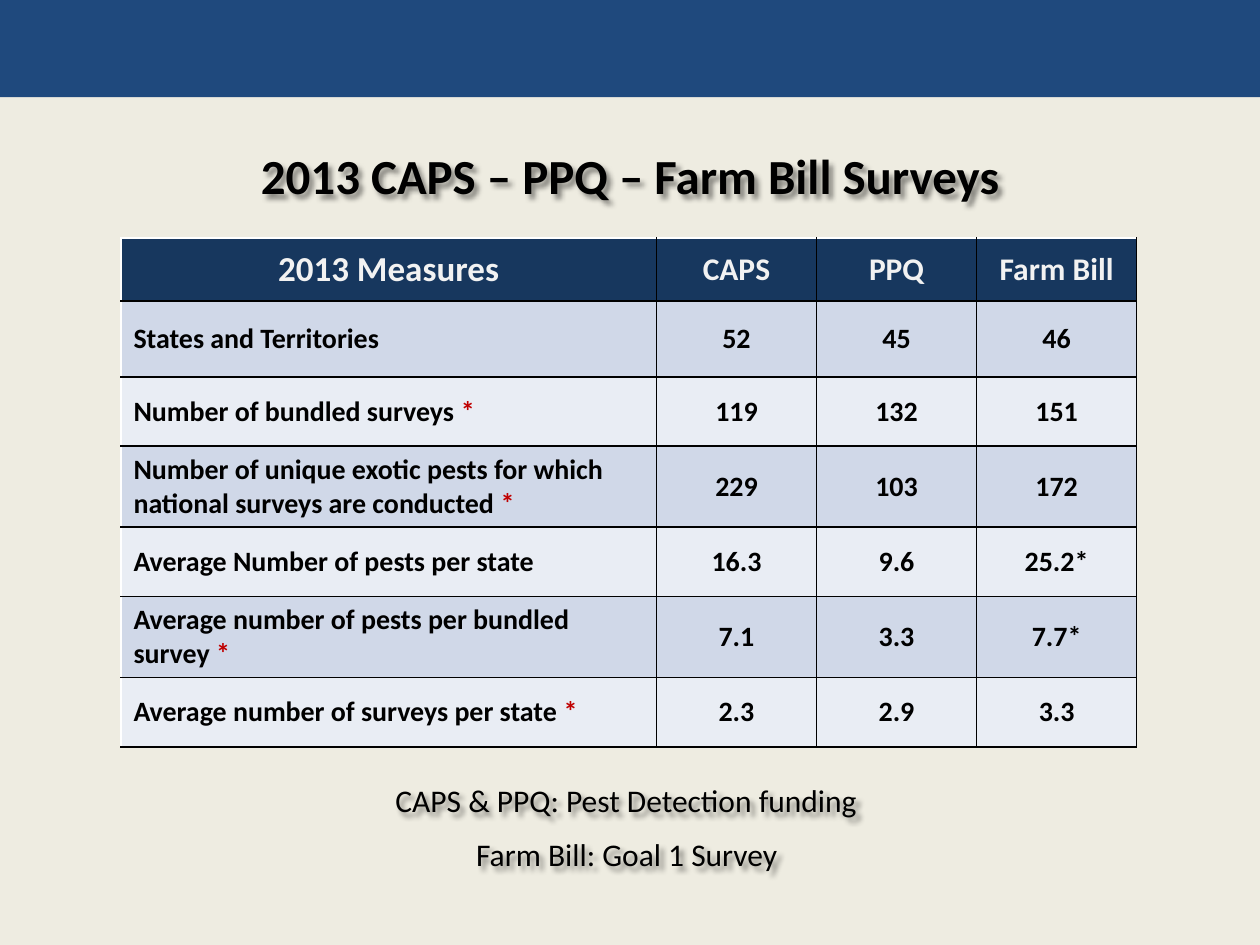
"""Build the 2013 survey measures slide."""
import lxml.etree
import pptx
import pptx.dml.color
import pptx.enum.shapes
import pptx.enum.text
import pptx.oxml.ns
import pptx.util

Pt = pptx.util.Pt
ALIGN = pptx.enum.text.PP_ALIGN
MIDDLE = pptx.enum.text.MSO_ANCHOR.MIDDLE
qn = pptx.oxml.ns.qn

TITLE = "2013 CAPS – PPQ – Farm Bill Surveys"
HEADER = ("2013 Measures", "CAPS", "PPQ", "Farm Bill")
MEASURES = [
    ("States and Territories", "52", "45", "46"),
    ("Number of bundled surveys *", "119", "132", "151"),
    ("Number of unique exotic pests for which national surveys are conducted *",
     "229", "103", "172"),
    ("Average Number of pests per state", "16.3", "9.6", "25.2*"),
    ("Average number of pests per bundled survey *", "7.1", "3.3", "7.7*"),
    ("Average number of surveys per state *", "2.3", "2.9", "3.3"),
]
NOTES = [
    ("CAPS & PPQ: Pest Detection funding", 218.9, 442.8, 281.5),
    ("Farm Bill: Goal 1 Survey", 265, 473.8, 188.6),
]
COLUMN_WIDTHS = [306] + [91.5] * 3
ROW_HEIGHTS = [36, 43.2] + [39.6] * 5
BLACK, WHITE, RED = "000000", "FFFFFF", "C00000"
NAVY, BANDS = "17375E", ("D0D8E8", "E9EDF4")


def color(value):
    return pptx.dml.color.RGBColor.from_string(value)


def paint(target, value):
    target.fill.solid()
    target.fill.fore_color.rgb = color(value)


def style(span, size, value=BLACK, bold=False):
    span.font.name = "Calibri"
    span.font.size = Pt(size)
    span.font.bold = bold
    span.font.color.rgb = color(value)


def add_child(parent, tag, **attributes):
    return lxml.etree.SubElement(parent, qn(tag), attributes)


def add_shadow(shape):
    effects = add_child(shape.element.spPr, "a:effectLst")
    shadow = add_child(effects, "a:outerShdw", blurRad="38100", dist="38100",
                       dir="2700000", algn="tl", rotWithShape="0")
    shade = add_child(shadow, "a:srgbClr", val=BLACK)
    add_child(shade, "a:alpha", val="43000")


def add_borders(cell, edges):
    properties = cell._tc.get_or_add_tcPr()
    for index, (side, value) in enumerate(edges.items()):
        line = add_child(properties, f"a:ln{side}", w=str(Pt(1)))
        add_child(add_child(line, "a:solidFill"), "a:srgbClr", val=value)
        properties.insert(index, line)


def fill_cell(cell, text, row, column):
    header = row == 0
    label = column == 0
    paint(cell, NAVY if header else BANDS[(row - 1) % 2])
    add_borders(cell, {"L": WHITE if label else BLACK, "R": BLACK,
                       "T": WHITE if header else BLACK, "B": BLACK})
    cell.vertical_anchor = MIDDLE
    para = cell.text_frame.paragraphs[0]
    para.alignment = ALIGN.LEFT if label and not header else ALIGN.CENTER
    starred = label and text.endswith("*")
    size = (20 if label else 18) if header else 16
    for part in (text[:-1], "*") if starred else (text,):
        span = para.add_run()
        span.text = part
        ink = "F2F2F2" if header else RED if part == "*" else BLACK
        style(span, size, ink, bold=True)


def add_measures(page):
    rows = [HEADER] + MEASURES
    frame = page.shapes.add_table(
        len(rows), len(HEADER), Pt(69.1), Pt(136.1),
        Pt(sum(COLUMN_WIDTHS)), Pt(sum(ROW_HEIGHTS)))
    table = frame.table
    for column, width in zip(table.columns, COLUMN_WIDTHS):
        column.width = Pt(width)
    for row, height in zip(table.rows, ROW_HEIGHTS):
        row.height = Pt(height)
    for row, texts in enumerate(rows):
        for column, text in enumerate(texts):
            fill_cell(table.cell(row, column), text, row, column)


def add_note(page, text, left, top, width):
    box = page.shapes.add_textbox(Pt(left), Pt(top), Pt(width), Pt(29))
    box.text_frame.word_wrap = False
    box.text_frame.auto_size = pptx.enum.text.MSO_AUTO_SIZE.SHAPE_TO_FIT_TEXT
    box.text_frame.text = text
    style(box.text_frame.paragraphs[0].runs[0], 18)
    add_shadow(box)


def main():
    deck = pptx.Presentation()
    deck.slide_width, deck.slide_height = Pt(720), Pt(540)
    page = deck.slides.add_slide(deck.slide_layouts[5])
    paint(page.background, "EEECE1")

    banner = page.shapes.add_shape(
        pptx.enum.shapes.MSO_SHAPE.RECTANGLE, 0, 0, Pt(720), Pt(55.5))
    paint(banner, "1F497D")
    banner.line.fill.background()
    banner.shadow.inherit = False

    title = page.shapes.title
    title.left, title.top, title.width, title.height = map(Pt, (36, 72, 648, 56))
    title.text_frame.text = TITLE
    title.text_frame.vertical_anchor = MIDDLE
    para = title.text_frame.paragraphs[0]
    para.alignment = ALIGN.CENTER
    style(para.runs[0], 28, bold=True)
    add_shadow(title)

    add_measures(page)
    for note in NOTES:
        add_note(page, *note)
    deck.save("out.pptx")


if __name__ == "__main__":
    main()
